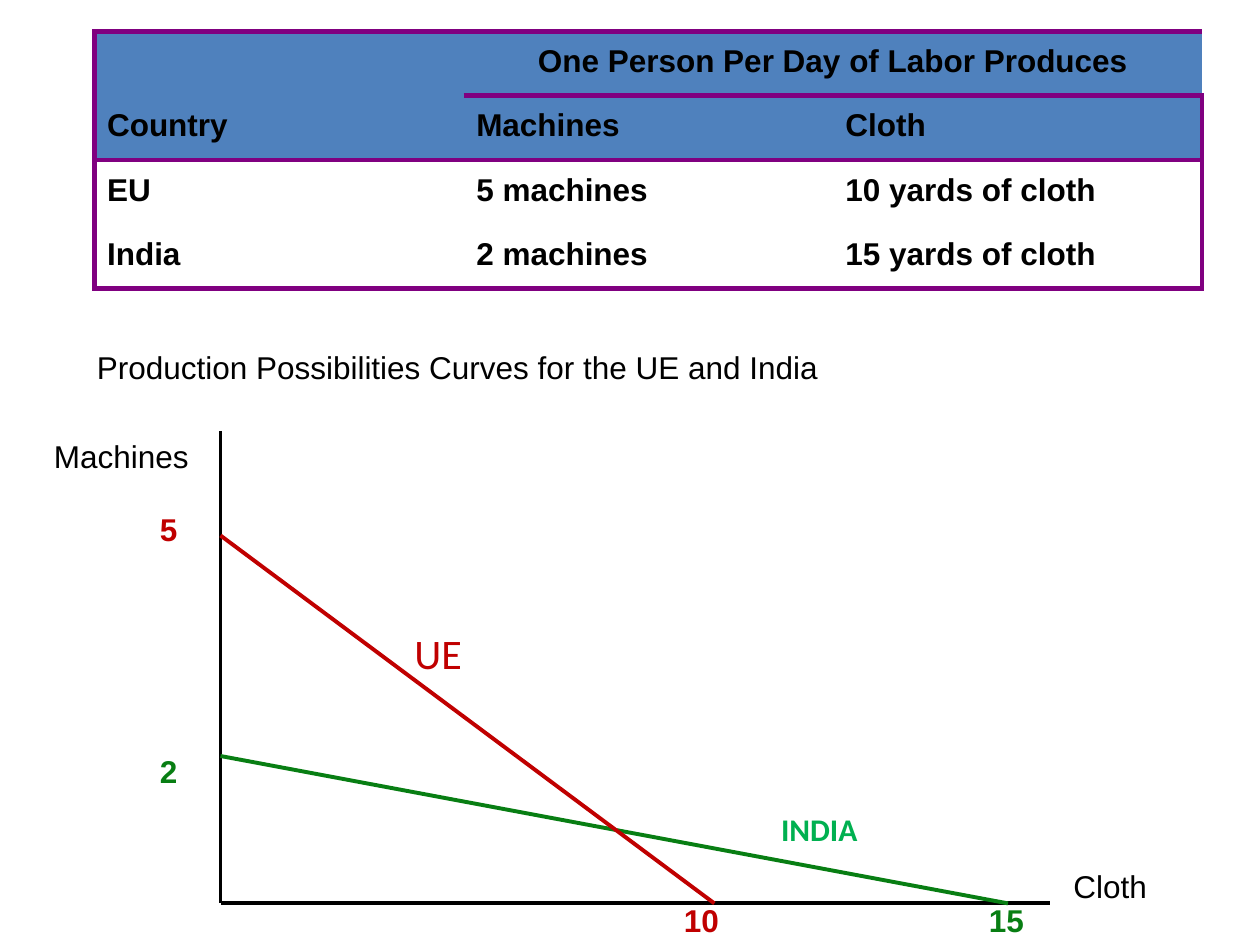
from lxml import etree
from pptx import Presentation
from pptx.dml.color import RGBColor
from pptx.enum.shapes import MSO_CONNECTOR
from pptx.enum.text import MSO_ANCHOR, MSO_AUTO_SIZE, PP_ALIGN
from pptx.oxml.ns import qn
from pptx.util import Inches, Pt

STRAIGHT = MSO_CONNECTOR.STRAIGHT
MIDDLE = MSO_ANCHOR.MIDDLE
CENTER, LEFT = PP_ALIGN.CENTER, PP_ALIGN.LEFT
FIT_SHAPE = MSO_AUTO_SIZE.SHAPE_TO_FIT_TEXT

BLACK = RGBColor(0x00, 0x00, 0x00)
BLUE = RGBColor(0x4F, 0x81, 0xBD)
PURPLE = RGBColor(0x80, 0x00, 0x80)
RED = RGBColor(0xC0, 0x00, 0x00)
GREEN = RGBColor(0x08, 0x7E, 0x13)
BRIGHT_GREEN = RGBColor(0x00, 0xB0, 0x50)

SLIDE_WIDTH, SLIDE_HEIGHT = 10, 7.5
TABLE_LEFT, TABLE_TOP, COLUMN_WIDTH, ROW_HEIGHT = 0.75, 0.25, 2.93, 0.51
HEADER_ROWS = 2
ORIGIN_X, ORIGIN_Y = 1.75, 7.17
AXIS_TOP, AXIS_RIGHT = 3.42, 8.33
LABEL_HEIGHT = 0.4

OUTPUT = [
    ("", "One Person Per Day of Labor Produces", ""),
    ("Country", "Machines", "Cloth"),
    ("EU", "5 machines", "10 yards of cloth"),
    ("India", "2 machines", "15 yards of cloth"),
]

TITLE = "Production Possibilities Curves for the UE and India"

LINES = [
    ((ORIGIN_X, AXIS_TOP), (ORIGIN_X, ORIGIN_Y), BLACK),
    ((AXIS_RIGHT, ORIGIN_Y), (ORIGIN_X, ORIGIN_Y), BLACK),
    ((ORIGIN_X, 6), (8, ORIGIN_Y), GREEN),
    ((ORIGIN_X, 4.25), (5.67, ORIGIN_Y), RED),
]

PLAIN = {"name": "Arial", "size": Pt(18), "bold": False}
BOLD = {**PLAIN, "bold": True}
UE_FORMAT = {"name": "Calibri", "size": Pt(24), "bold": False}
INDIA_FORMAT = {**BOLD, "name": "Calibri"}

LABELS = [
    ("Machines", 0.33, 3.42, 1.28, PLAIN, BLACK),
    ("Cloth", 8.42, 6.83, 0.79, PLAIN, BLACK),
    ("2", 1.17, 5.92, 0.34, BOLD, GREEN),
    ("15", 7.75, 7.1, 0.48, BOLD, GREEN),
    ("10", 5.33, 7.1, 0.48, BOLD, RED),
    ("5", 1.17, 4, 0.34, BOLD, RED),
    ("UE", 3.19, 4.93, 0.58, UE_FORMAT, RED),
    ("INDIA", 6.1, 6.38, 0.81, INDIA_FORMAT, BRIGHT_GREEN),
]


def write(paragraph, text, font_format, color):
    run = paragraph.add_run()
    run.text = text
    for attribute, value in font_format.items():
        setattr(run.font, attribute, value)
    run.font.color.rgb = color


def add_label(slide, text, left, top, width, font_format, color, wrap=False):
    label = slide.shapes.add_textbox(
        Inches(left), Inches(top), Inches(width), Inches(LABEL_HEIGHT))
    frame = label.text_frame
    frame.word_wrap = wrap
    frame.auto_size = FIT_SHAPE
    write(frame.paragraphs[0], text, font_format, color)
    return frame.paragraphs[0]


def add_line(slide, start, end, color):
    line = slide.shapes.add_connector(
        STRAIGHT, *(Inches(length) for length in (*start, *end)))
    line.line.color.rgb = color
    line.line.width = Pt(2.25)
    etree.SubElement(line._element.spPr, qn("a:effectLst"))


def add_borders(cell, ruled_sides):
    properties = cell._tc.get_or_add_tcPr()
    for side in "LRTB":
        border = etree.SubElement(properties, qn(f"a:ln{side}"))
        if side in ruled_sides:
            border.set("w", str(Pt(3)))
            fill = etree.SubElement(border, qn("a:solidFill"))
            etree.SubElement(fill, qn("a:srgbClr")).set("val", str(PURPLE))
        else:
            etree.SubElement(border, qn("a:noFill"))


def ruled_sides(row, column, last_row, last_column):
    def rule_below(line):
        return line in (-1, HEADER_ROWS - 1, last_row) or (line == 0 and column > 0)

    rules = {
        "L": column == 0,
        "R": column == last_column,
        "T": rule_below(row - 1),
        "B": rule_below(row),
    }
    return {side for side, ruled in rules.items() if ruled}


def add_output_table(slide):
    row_count, column_count = len(OUTPUT), len(OUTPUT[0])
    table = slide.shapes.add_table(
        row_count, column_count, Inches(TABLE_LEFT), Inches(TABLE_TOP),
        Inches(COLUMN_WIDTH * column_count), Inches(ROW_HEIGHT * row_count)).table
    table.first_row = table.horz_banding = False
    table.cell(0, 1).merge(table.cell(0, column_count - 1))
    for row, texts in enumerate(OUTPUT):
        for column, text in enumerate(texts):
            cell = table.cell(row, column)
            add_borders(cell, ruled_sides(row, column, row_count - 1, column_count - 1))
            if row < HEADER_ROWS:
                cell.fill.solid()
                cell.fill.fore_color.rgb = BLUE
            else:
                cell.fill.background()
            cell.vertical_anchor = MIDDLE
            if text:
                paragraph = cell.text_frame.paragraphs[0]
                paragraph.alignment = CENTER if row == 0 else LEFT
                paragraph.line_spacing = 0.85
                paragraph.space_before = Pt(3.6)
                write(paragraph, text, BOLD, BLACK)


def main():
    presentation = Presentation()
    presentation.slide_width = Inches(SLIDE_WIDTH)
    presentation.slide_height = Inches(SLIDE_HEIGHT)
    slide = presentation.slides.add_slide(presentation.slide_layouts[6])

    title = add_label(slide, TITLE, 0.67, 2.75, 8.66, PLAIN, BLACK, wrap=True)
    title.line_spacing = 0.9
    add_output_table(slide)
    for line in LINES:
        add_line(slide, *line)
    for label in LABELS:
        add_label(slide, *label)

    presentation.save("out.pptx")


if __name__ == "__main__":
    main()
